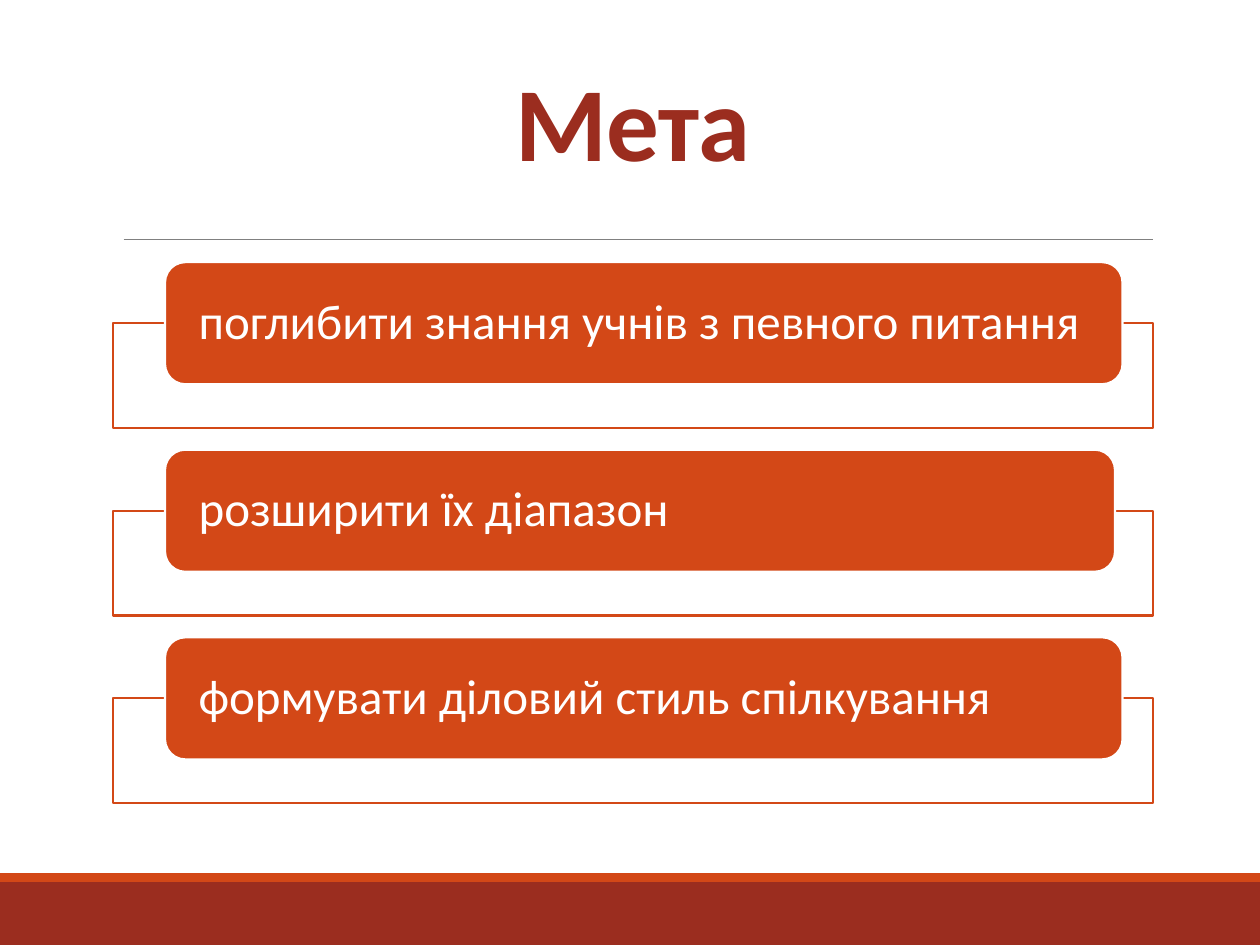
from lxml import etree
from pptx import Presentation
from pptx.dml.color import RGBColor
from pptx.enum import shapes as kinds, text as txt
from pptx.oxml.ns import qn
from pptx.util import Pt

HEADING = "Мета"
GOALS = [
    ("поглибити знання учнів з певного питання", 547.2),
    ("розширити їх діапазон", 542.9),
    ("формувати діловий стиль спілкування", 547.2),
]
THEME = {
    "font": "Calibri", "heading_size": 60, "goal_size": 28,
    "dark": "9B2D1F", "accent": "D34817", "light": "FFFFFF", "rule": "808080",
}
WIDTH, HEIGHT = 720, 540
LEFT, FRAME_WIDTH, FRAME_HEIGHT = 64.8, 594, 59.8
PILL_LEFT, PILL_TOP, PILL_HEIGHT, STEP = 94.3, 149.8, 69.8, 107.2
FOOTER_TOP, STRIPE_HEIGHT = 504, 5


def colour(role):
    return RGBColor.from_string(THEME[role])


def apply(target, values):
    for name, value in values.items():
        setattr(target, name, value)


def add_block(slide, kind, box, fill, outline=None):
    block = slide.shapes.add_shape(kind, *map(Pt, box))
    block.shadow.inherit = False
    block.fill.solid()
    block.fill.fore_color.rgb = colour(fill)
    if outline:
        block.line.color.rgb = colour(outline)
        block.line.width = Pt(1.25)
    else:
        block.line.fill.background()
    return block


def write(holder, wording, size, role, frame_format, paragraph_format, bold=False):
    frame = holder.text_frame
    apply(frame, {"word_wrap": True, "auto_size": txt.MSO_AUTO_SIZE.NONE, **frame_format})
    paragraph = frame.paragraphs[0]
    apply(paragraph, paragraph_format)
    run = paragraph.add_run()
    run.text = wording
    apply(run.font, {"name": THEME["font"], "size": Pt(THEME[size]), "bold": bold})
    run.font.color.rgb = colour(role)
    return run


def add_heading(slide):
    heading = slide.shapes.title
    apply(heading, {"left": Pt(LEFT), "top": Pt(22.3),
                    "width": Pt(FRAME_WIDTH), "height": Pt(85.7)})
    run = write(heading, HEADING, "heading_size", "dark",
                {"vertical_anchor": txt.MSO_ANCHOR.BOTTOM},
                {"alignment": txt.PP_ALIGN.CENTER, "line_spacing": 0.85}, bold=True)
    run.font._element.set("spc", "-50")


def add_rule(slide):
    rule = slide.shapes.add_connector(
        kinds.MSO_CONNECTOR.STRAIGHT, *map(Pt, (70.6, 136.8, 658.8, 136.8)))
    rule.line.color.rgb = colour("rule")
    rule.line.width = Pt(0.5)
    etree.SubElement(rule._element.spPr, qn("a:effectLst"))


def add_goal(slide, index, wording, pill_width):
    top = PILL_TOP + index * STEP
    middle = top + PILL_HEIGHT / 2
    add_block(slide, kinds.MSO_SHAPE.RECTANGLE,
              (LEFT, middle, FRAME_WIDTH, FRAME_HEIGHT), "light", "accent")
    pill = add_block(slide, kinds.MSO_SHAPE.ROUNDED_RECTANGLE,
                     (PILL_LEFT, top, pill_width, PILL_HEIGHT), "accent", "light")
    write(pill, wording, "goal_size", "light",
          {"margin_left": Pt(15.8), "margin_right": Pt(15.8), "margin_top": 0,
           "margin_bottom": 0, "vertical_anchor": txt.MSO_ANCHOR.MIDDLE},
          {"alignment": txt.PP_ALIGN.LEFT, "line_spacing": 0.9})


def main():
    deck = Presentation()
    apply(deck, {"slide_width": Pt(WIDTH), "slide_height": Pt(HEIGHT)})
    slide = deck.slides.add_slide(deck.slide_layouts.get_by_name("Title Only"))
    for top, height, role in [
        (FOOTER_TOP, HEIGHT - FOOTER_TOP, "dark"),
        (FOOTER_TOP - STRIPE_HEIGHT, STRIPE_HEIGHT, "accent"),
    ]:
        add_block(slide, kinds.MSO_SHAPE.RECTANGLE, (0, top, WIDTH, height), role)
    add_rule(slide)
    add_heading(slide)
    for index, (wording, pill_width) in enumerate(GOALS):
        add_goal(slide, index, wording, pill_width)
    deck.save("out.pptx")


if __name__ == "__main__":
    main()
